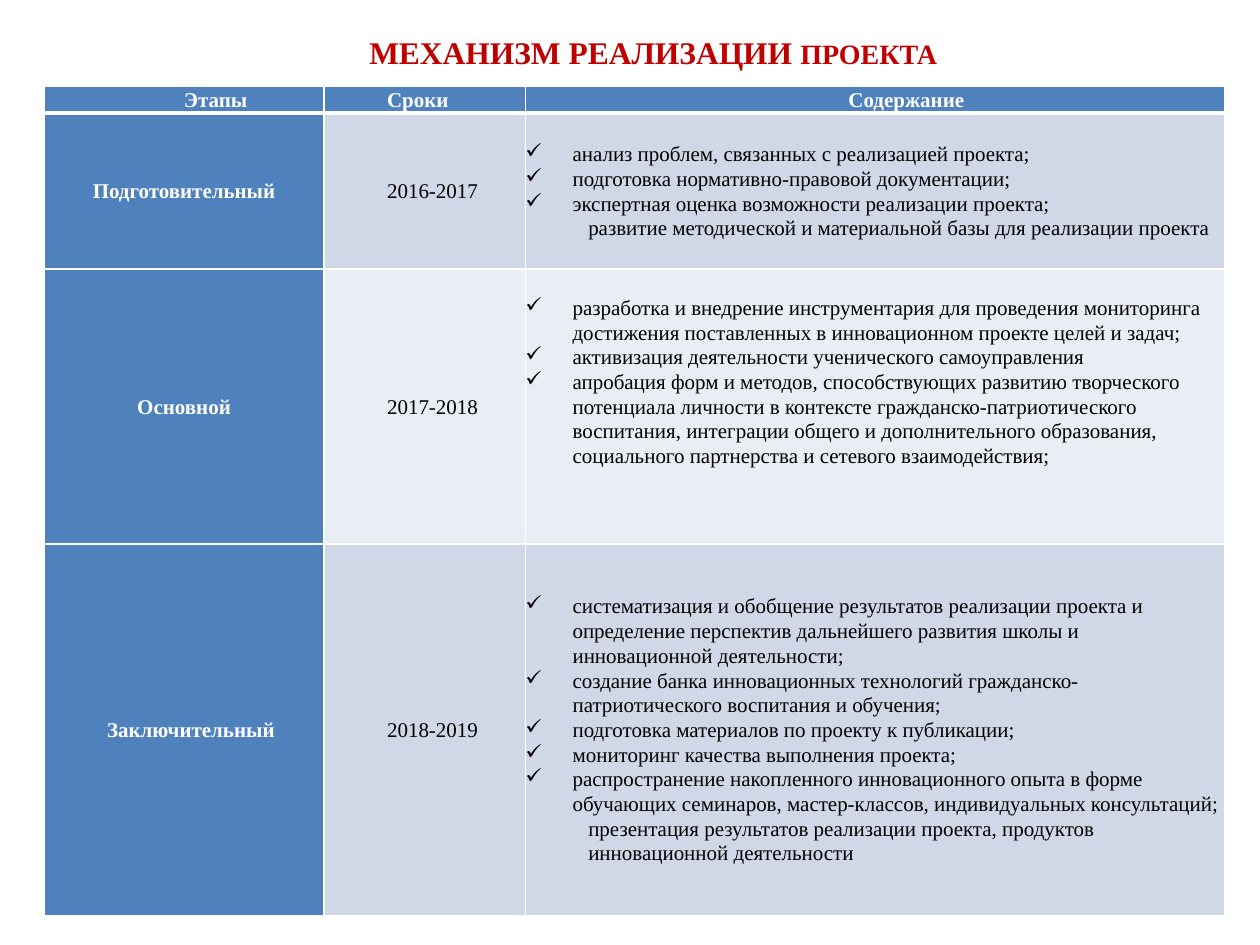
"""Build a slide with a table of project stages, dates and contents."""
from dataclasses import dataclass

from lxml.etree import SubElement
from pptx import Presentation
from pptx.dml.color import RGBColor
from pptx.enum.text import MSO_ANCHOR as Anchor
from pptx.enum.text import MSO_AUTO_SIZE as AutoSize
from pptx.enum.text import PP_ALIGN as Align
from pptx.oxml.ns import qn
from pptx.util import Pt

COLORS = {
    "title": "C00000",
    "header": "4F81BD",
    "band_dark": "D0D8E8",
    "band_light": "E9EDF4",
    "white": "FFFFFF",
    "black": "000000",
}
FONT = "Times New Roman"
INDENT = 36
BULLET_INDENT = 27
LINE_HEIGHT = 14.2
TABLE_LEFT, TABLE_TOP = 25.2, 49
COLUMN_WIDTHS = (160, 115, 399.6)
HEADER_HEIGHT = 15.5


@dataclass(frozen=True)
class Line:
    text: str
    indent: float = INDENT
    bullet: bool = False
    align: Align = Align.LEFT


@dataclass(frozen=True)
class CellStyle:
    fill: str
    color: str
    bold: bool = False
    top_border: float = 1
    bottom_border: float = 1
    bottom_margin: float = 0


@dataclass(frozen=True)
class Stage:
    name: Line
    years: str
    tasks: tuple[str, ...]
    height: float
    band: str
    closing: str = ""
    bottom_margin: float = 0


HEADERS = (
    Line("Этапы", align=Align.CENTER),
    Line("Сроки"),
    Line("Содержание", align=Align.CENTER),
)
STAGES = (
    Stage(
        Line("Подготовительный", indent=0, align=Align.CENTER),
        "2016-2017",
        (
            "анализ проблем, связанных с реализацией проекта;",
            "подготовка нормативно-правовой документации;",
            "экспертная оценка возможности реализации проекта;",
        ),
        89.3,
        "band_dark",
        "развитие методической и материальной базы для реализации проекта",
    ),
    Stage(
        Line("Основной", indent=0, align=Align.CENTER),
        "2017-2018",
        (
            "разработка и внедрение инструментария для проведения мониторинга "
            "достижения поставленных в инновационном проекте целей и задач;",
            "активизация деятельности ученического самоуправления",
            "апробация форм и методов, способствующих развитию творческого "
            "потенциала личности в контексте гражданско-патриотического "
            "воспитания, интеграции общего и дополнительного образования, "
            "социального партнерства и сетевого взаимодействия;",
        ),
        157,
        "band_light",
        bottom_margin=2 * LINE_HEIGHT,
    ),
    Stage(
        Line("Заключительный"),
        "2018-2019",
        (
            "систематизация и обобщение результатов реализации проекта и "
            "определение перспектив дальнейшего развития школы и "
            "инновационной деятельности;",
            "создание банка инновационных технологий "
            "гражданско-патриотического воспитания и обучения;",
            "подготовка материалов по проекту к публикации;",
            "мониторинг качества выполнения проекта;",
            "распространение накопленного инновационного опыта в форме "
            "обучающих семинаров, мастер-классов, индивидуальных консультаций;",
        ),
        212.4,
        "band_dark",
        "презентация результатов реализации проекта, продуктов "
        "инновационной деятельности",
    ),
)


def add_run(paragraph, text: str, size: float, color: str, bold: bool) -> None:
    run = paragraph.add_run()
    run.text = text
    run.font.name = FONT
    run.font.size = Pt(size)
    run.font.bold = bold
    run.font.color.rgb = RGBColor.from_string(COLORS[color])


def add_line(paragraph, line: Line, style: CellStyle) -> None:
    properties = paragraph._p.get_or_add_pPr()
    properties.set("marL", str(Pt(line.indent)))
    properties.set("indent", str(Pt(-line.indent if line.bullet else 0)))
    if line.bullet:
        SubElement(properties, qn("a:buChar")).set("char", "✓")
    paragraph.alignment = line.align
    paragraph.line_spacing = 1.06
    paragraph.font.size = Pt(12)
    add_run(paragraph, line.text, 12, style.color, style.bold)


def set_borders(cell, style: CellStyle) -> None:
    widths = {"L": 1, "R": 1, "T": style.top_border, "B": style.bottom_border}
    properties = cell._tc.get_or_add_tcPr()
    for position, (side, width) in enumerate(widths.items()):
        border = SubElement(properties, qn(f"a:ln{side}"), w=str(Pt(width)))
        fill = SubElement(border, qn("a:solidFill"))
        SubElement(fill, qn("a:srgbClr")).set("val", COLORS["white"])
        properties.insert(position, border)


def fill_cell(cell, lines: list[Line], style: CellStyle) -> None:
    cell.margin_left = cell.margin_right = cell.margin_top = 0
    cell.margin_bottom = Pt(style.bottom_margin)
    cell.vertical_anchor = Anchor.MIDDLE
    cell.fill.solid()
    cell.fill.fore_color.rgb = RGBColor.from_string(COLORS[style.fill])
    set_borders(cell, style)
    frame = cell.text_frame
    for number, line in enumerate(lines):
        add_line(frame.add_paragraph() if number else frame.paragraphs[0], line, style)


def fill_title(shape) -> None:
    shape.left, shape.top, shape.width, shape.height = map(Pt, (203.8, 15, 352, 29))
    frame = shape.text_frame
    frame.word_wrap = False
    frame.auto_size = AutoSize.SHAPE_TO_FIT_TEXT
    frame.vertical_anchor = Anchor.TOP
    paragraph = frame.paragraphs[0]
    paragraph.alignment = Align.LEFT
    add_run(paragraph, "МЕХАНИЗМ РЕАЛИЗАЦИИ ", 18, "title", True)
    add_run(paragraph, "ПРОЕКТА", 16, "title", True)


def add_stage_table(slide) -> None:
    heights = (HEADER_HEIGHT, *(stage.height for stage in STAGES))
    table = slide.shapes.add_table(
        len(heights), len(COLUMN_WIDTHS), Pt(TABLE_LEFT), Pt(TABLE_TOP),
        Pt(sum(COLUMN_WIDTHS)), Pt(sum(heights)),
    ).table
    table.horz_banding = False
    for column, width in zip(table.columns, COLUMN_WIDTHS):
        column.width = Pt(width)
    for row, height in zip(table.rows, heights):
        row.height = Pt(height)

    header_style = CellStyle("header", "white", bold=True, bottom_border=3)
    for column, header in enumerate(HEADERS):
        fill_cell(table.cell(0, column), [header], header_style)
    for row, stage in enumerate(STAGES, start=1):
        top = 3 if row == 1 else 1
        name_style = CellStyle("header", "white", True, top)
        years_style = CellStyle(stage.band, "black", False, top)
        tasks_style = CellStyle(stage.band, "black", False, top, 1, stage.bottom_margin)
        tasks = [Line(task, BULLET_INDENT, bullet=True) for task in stage.tasks]
        if stage.closing:
            tasks.append(Line(stage.closing))
        fill_cell(table.cell(row, 0), [stage.name], name_style)
        fill_cell(table.cell(row, 1), [Line(stage.years)], years_style)
        fill_cell(table.cell(row, 2), tasks, tasks_style)


def main() -> None:
    presentation = Presentation()
    presentation.slide_width, presentation.slide_height = Pt(720), Pt(540)
    slide = presentation.slides.add_slide(presentation.slide_layouts[5])
    fill_title(slide.shapes.title)
    add_stage_table(slide)
    presentation.save("out.pptx")


if __name__ == "__main__":
    main()
